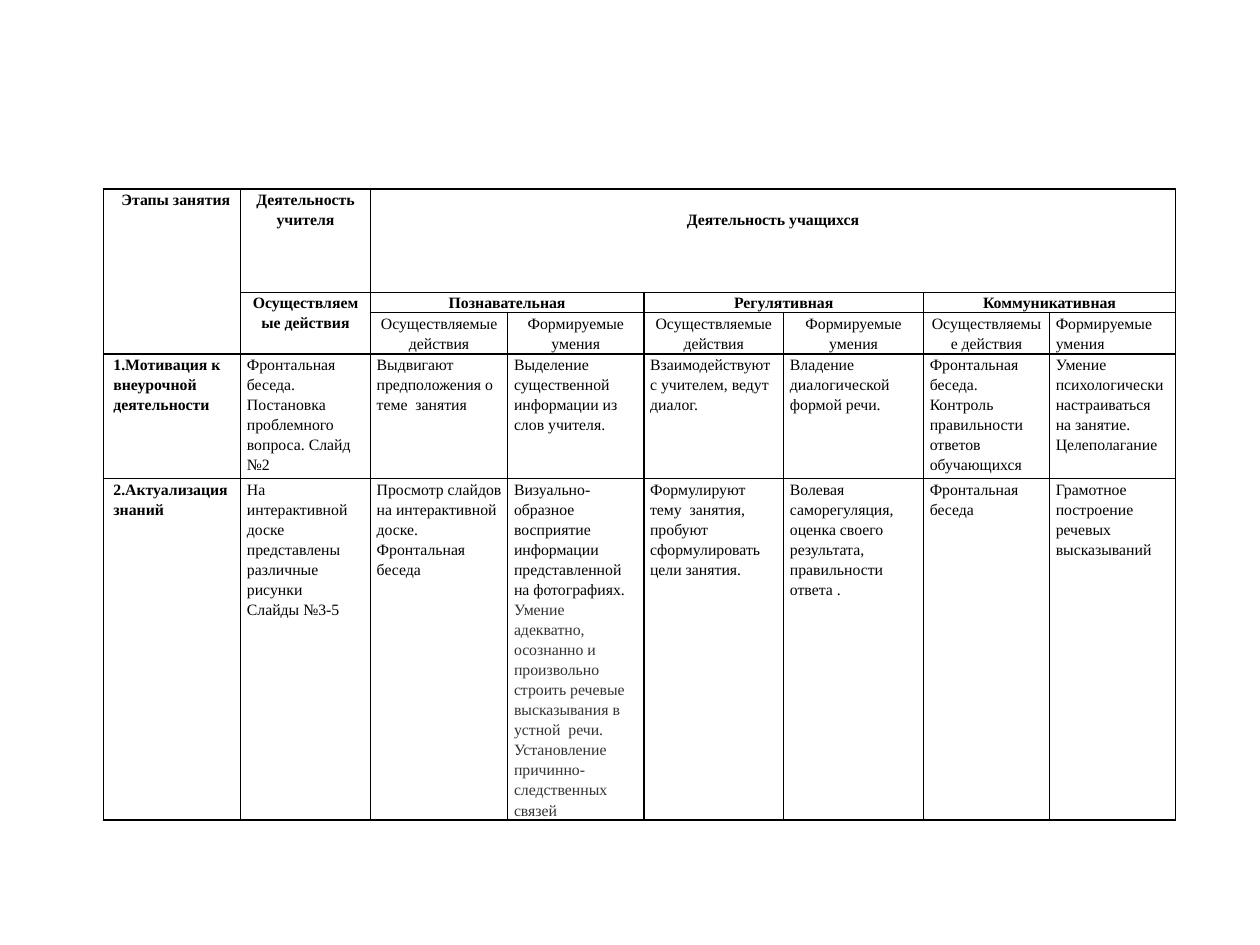
from lxml.etree import SubElement
from pptx import Presentation
from pptx.dml.color import RGBColor
from pptx.enum.text import PP_ALIGN
from pptx.oxml.ns import qn
from pptx.util import Inches, Pt

BLACK = RGBColor(0, 0, 0)
GREY = RGBColor(0x33, 0x33, 0x33)
FONT = "Times New Roman"

WIDTHS = [1.09, 1.03, 1.09, 1.08, 1.11, 1.11, 1, 1]
HEIGHTS = [0.82, 0.16, 0.33, 0.99, 2.71]

ACTIONS = "Осуществляемые действия"
SKILLS = "Формируемые умения"
# row, column, rows spanned, columns spanned, text
HEADS = [
    (0, 0, 3, 1, "Этапы занятия"),
    (0, 1, 1, 1, "Деятельность учителя"),
    (0, 2, 1, 6, "Деятельность учащихся"),
    (1, 1, 2, 1, ACTIONS),
    (1, 2, 1, 2, "Познавательная"),
    (1, 4, 1, 2, "Регулятивная"),
    (1, 6, 1, 2, "Коммуникативная"),
]
STAGES = [
    [
        ["1.Мотивация к", "внеурочной", "деятельности"],
        ["Фронтальная беседа. Постановка проблемного вопроса. Слайд №2"],
        ["Выдвигают предположения о теме  занятия"],
        ["Выделение существенной информации из слов учителя."],
        ["Взаимодействуют с учителем, ведут диалог."],
        ["Владение диалогической формой речи."],
        ["Фронтальная", "беседа. Контроль правильности ответов обучающихся"],
        ["Умение психологически", "настраиваться", "на занятие. Целеполагание"],
    ],
    [
        ["2.Актуализация", "знаний"],
        ["На интерактивной доске представлены различные рисунки", "Слайды №3-5"],
        ["Просмотр слайдов на интерактивной доске. Фронтальная беседа"],
        ["Визуально- образное восприятие информации представленной на фотографиях. "],
        ["Формулируют  тему  занятия, пробуют сформулировать цели занятия."],
        ["Волевая саморегуляция, оценка своего результата, правильности ответа ."],
        ["Фронтальная", "беседа"],
        ["Грамотное", "построение", "речевых", "высказываний"],
    ],
]
SPEECH = ("Умение адекватно, осознанно и произвольно строить речевые высказывания "
          "в устной  речи. Установление причинно-следственных связей")


def add_run(para, text, bold=False, color=BLACK):
    run = para.add_run()
    run.text = text
    font = run.font
    font.name, font.size, font.bold = FONT, Pt(9), bold
    font.color.rgb = color


def write(cell, lines, bold=False, align=PP_ALIGN.LEFT):
    frame = cell.text_frame
    for i, line in enumerate(lines):
        para = frame.add_paragraph() if i else frame.paragraphs[0]
        para.alignment = align
        para.line_spacing = 1.15
        add_run(para, line, bold)


def style(cell):
    """Clear the fill, set narrow margins and draw black borders."""
    cell.margin_left = cell.margin_right = Inches(0.05)
    cell.margin_top = cell.margin_bottom = 0
    props = cell._tc.get_or_add_tcPr()
    for side in ("a:lnL", "a:lnR", "a:lnT", "a:lnB"):
        line = SubElement(props, qn(side), w=str(Pt(1)))
        fill = SubElement(line, qn("a:solidFill"))
        SubElement(fill, qn("a:srgbClr"), val=str(BLACK))
    cell.fill.background()


def add_grid(slide):
    frame = slide.shapes.add_table(
        len(HEIGHTS), len(WIDTHS), Inches(0.82), Inches(1.5),
        Inches(sum(WIDTHS)), Inches(sum(HEIGHTS)))
    table = frame.table
    table.first_row = table.horz_banding = False
    for col, width in zip(table.columns, WIDTHS):
        col.width = Inches(width)
    for row, height in zip(table.rows, HEIGHTS):
        row.height = Inches(height)
    for cell in table.iter_cells():
        style(cell)
    return table


def fill_heads(table):
    for row, col, down, across, text in HEADS:
        cell = table.cell(row, col)
        if down * across > 1:
            cell.merge(table.cell(row + down - 1, col + across - 1))
        write(cell, [text], True, PP_ALIGN.CENTER)
    table.cell(0, 0).margin_left = Inches(0.11)
    table.cell(0, 2).margin_top = Inches(0.16)
    last = len(WIDTHS) - 1
    for col in range(2, last + 1):
        align = PP_ALIGN.LEFT if col == last else PP_ALIGN.CENTER
        write(table.cell(2, col), [SKILLS if col % 2 else ACTIONS], align=align)


def fill_stages(table):
    for row, stage in enumerate(STAGES, 3):
        for col, lines in enumerate(stage):
            write(table.cell(row, col), lines, bold=col == 0)
        table.cell(row, 0).margin_left = Inches(0.08)
    add_run(table.cell(4, 3).text_frame.paragraphs[0], SPEECH, color=GREY)


def main():
    deck = Presentation()
    deck.slide_width, deck.slide_height = Inches(10), Inches(7.5)
    slide = deck.slides.add_slide(deck.slide_layouts[6])
    table = add_grid(slide)
    fill_heads(table)
    fill_stages(table)
    deck.save("out.pptx")


if __name__ == "__main__":
    main()
